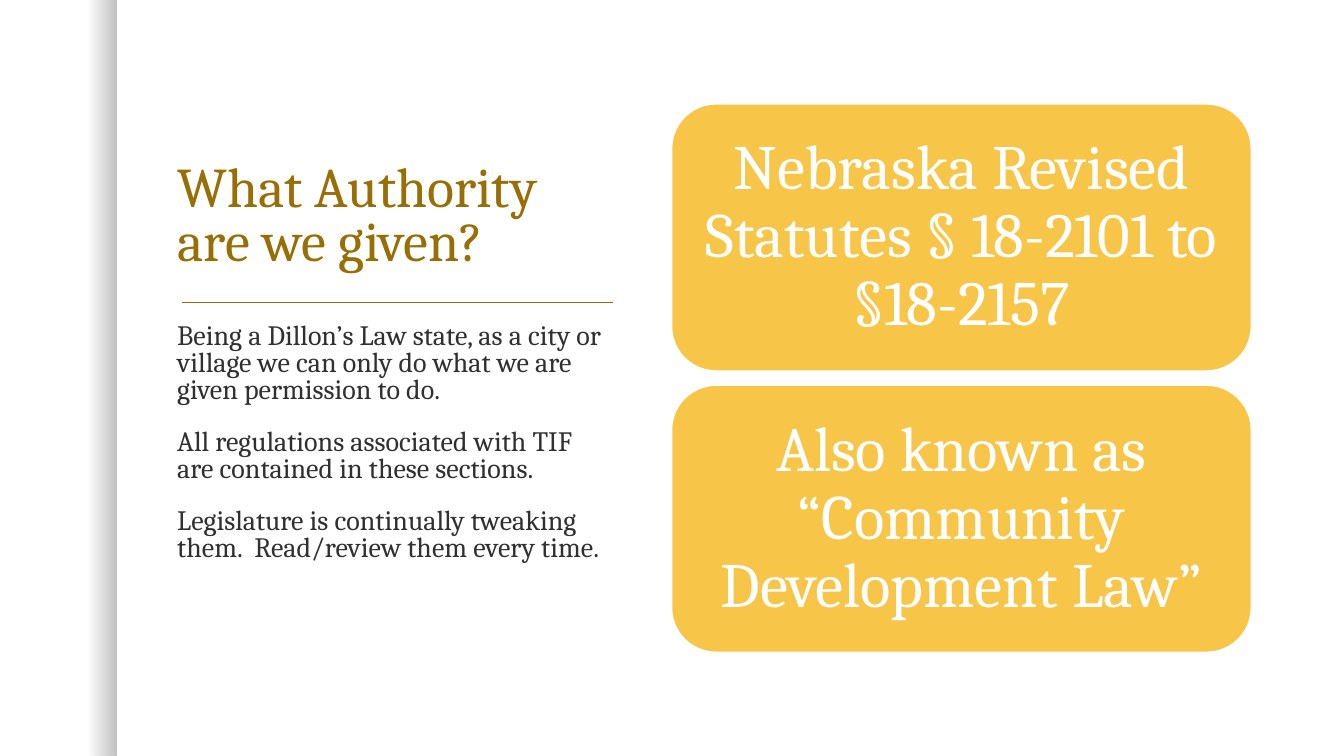
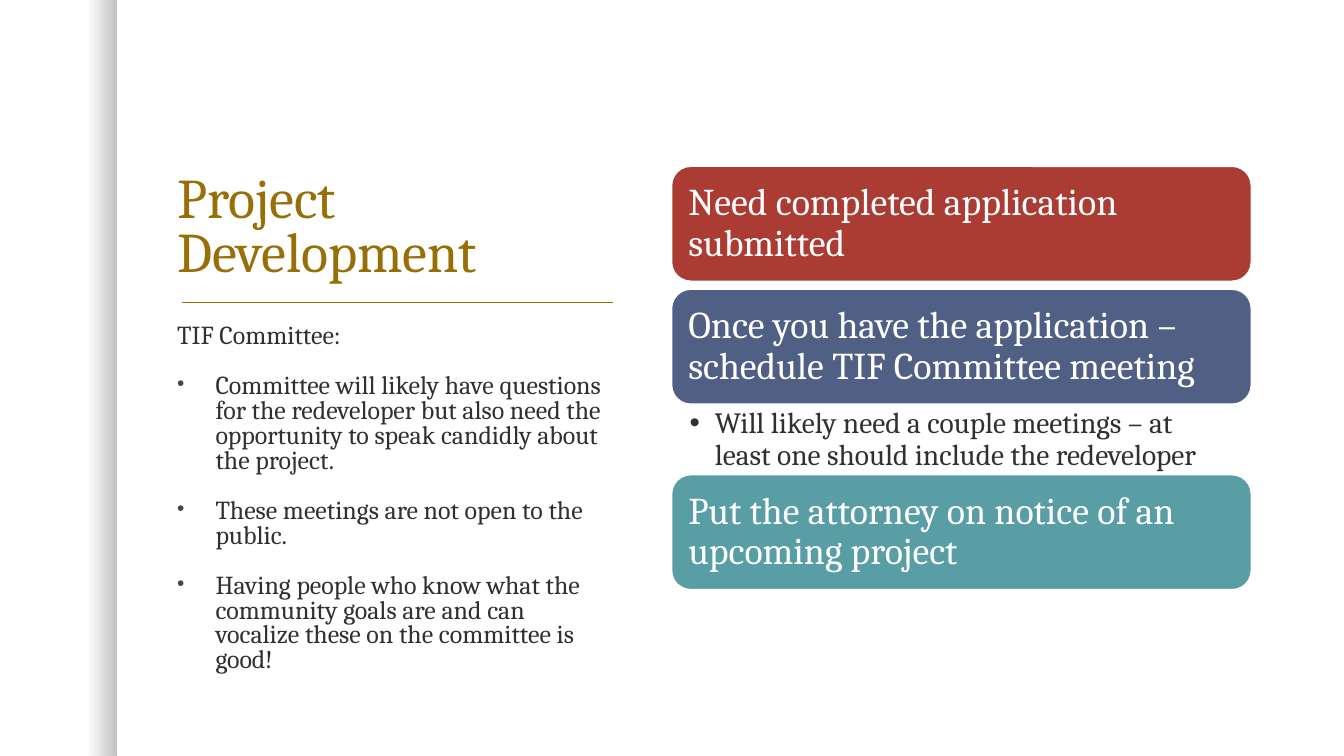
from dataclasses import dataclass

from lxml import etree
from pptx import Presentation, util as u
from pptx.dml.color import RGBColor
from pptx.enum import shapes, text
from pptx.oxml.ns import qn


@dataclass(frozen=True)
class Theme:
    """Colours and type sizes shared by the slides."""
    font: str = "Cambria"
    accent: str = "986F07"
    ink: str = "303030"
    bullet: str = "454545"
    white: str = "FFFFFF"
    shadow: str = "000000"
    gold: str = "F7C547"
    red: str = "AB3C33"
    blue: str = "506084"
    teal: str = "599EA5"
    title_size: float = 40
    statute_size: float = 45
    step_size: float = 27
    note_size: float = 21


@dataclass(frozen=True)
class Box:
    """A rectangle in slide units that yields inner boxes by percentage."""
    left: int
    top: int
    width: int
    height: int

    def inner(self, left, top, width, height):
        """Return the inner box at the given percentages."""
        return Box(int(self.left + self.width * left / 100),
                   int(self.top + self.height * top / 100),
                   int(self.width * width / 100),
                   int(self.height * height / 100))

    def bounds(self):
        """Return left, top, width and height."""
        return self.left, self.top, self.width, self.height


@dataclass(frozen=True)
class Card:
    """A rounded panel with its fill and share of the stack."""
    words: str
    color: str
    share: float


@dataclass(frozen=True)
class Note:
    """A bulleted remark under a card and its share of the stack."""
    words: str
    share: float


THEME = Theme()
SLIDE = Box(0, 0, u.Inches(13.33), u.Inches(7.5))
LEFT, CENTER = text.PP_ALIGN.LEFT, text.PP_ALIGN.CENTER
TOP, MIDDLE, BOTTOM = (text.MSO_ANCHOR.TOP, text.MSO_ANCHOR.MIDDLE,
                       text.MSO_ANCHOR.BOTTOM)


def set_frame(frame, anchor, insets=(0.1, 0.05, 0.1, 0.05)):
    """Set wrapping, anchor and insets in inches."""
    frame.word_wrap = True
    frame.auto_size = text.MSO_AUTO_SIZE.NONE
    frame.vertical_anchor = anchor
    (frame.margin_left, frame.margin_top,
     frame.margin_right, frame.margin_bottom) = map(u.Inches, insets)


def set_para(para, words, size, color, spacing, align=LEFT):
    """Fill a paragraph and format its runs."""
    para.text = words
    para.alignment = align
    para.line_spacing = spacing
    for span in para.runs:
        span.font.name = THEME.font
        span.font.size = u.Pt(size)
        span.font.color.rgb = RGBColor.from_string(color)


def add_bullet(para, indent, color, percent):
    """Give a paragraph a hanging round bullet."""
    props = para._p.get_or_add_pPr()
    props.set("marL", str(u.Inches(indent)))
    props.set("indent", str(-u.Inches(indent)))
    tint = etree.SubElement(props, qn("a:buClr"))
    etree.SubElement(tint, qn("a:srgbClr"), val=color)
    etree.SubElement(props, qn("a:buSzPct"), val=str(percent * 1000))
    etree.SubElement(props, qn("a:buFont"), typeface="Arial")
    etree.SubElement(props, qn("a:buChar"), char="•")


def add_edge_band(page, box):
    """Draw the soft shadow band at the left edge."""
    band = page.shapes.add_shape(shapes.MSO_SHAPE.RECTANGLE, *box.bounds())
    band.shadow.inherit = False
    band.line.fill.background()
    band.fill.gradient()
    band.fill.gradient_angle = 0
    for stop, position in zip(band.fill.gradient_stops, (0.75, 1)):
        stop.position = position
        stop.color.rgb = RGBColor.from_string(THEME.shadow)
    for tint, alpha in zip(band._element.spPr.iter(qn("a:srgbClr")), (0, 25)):
        etree.SubElement(tint, qn("a:alpha"), val=str(alpha * 1000))


def add_rule(page, box):
    """Draw the thin line along the top of a box."""
    rule = page.shapes.add_connector(
        shapes.MSO_CONNECTOR.STRAIGHT, box.left, box.top,
        box.left + box.width, box.top)
    rule.line.color.rgb = RGBColor.from_string(THEME.accent)
    rule.line.width = u.Pt(1)
    etree.SubElement(rule._element.spPr, qn("a:effectLst"))


def add_title(page, box, words):
    """Place and format the title placeholder."""
    title = page.shapes.title
    title.left, title.top, title.width, title.height = box.bounds()
    set_frame(title.text_frame, BOTTOM)
    set_para(title.text_frame.paragraphs[0], words, THEME.title_size,
             THEME.accent, 0.8)


def add_body(page, box, lines, size, bulleted_from):
    """Write the explanatory paragraphs, bulleted from a given index."""
    frame = page.shapes.add_textbox(*box.bounds()).text_frame
    set_frame(frame, TOP)
    for index, words in enumerate(lines):
        para = frame.add_paragraph() if index else frame.paragraphs[0]
        if index >= bulleted_from:
            add_bullet(para, 0.38, THEME.bullet, 80)
        set_para(para, words, size, THEME.ink, 0.8)
        if index:
            para.space_before = u.Pt(18)


def add_card(page, box, card, size, inset, align):
    """Draw one rounded card with its text."""
    panel = page.shapes.add_shape(
        shapes.MSO_SHAPE.ROUNDED_RECTANGLE, *box.bounds())
    panel.shadow.inherit = False
    panel.fill.solid()
    panel.fill.fore_color.rgb = RGBColor.from_string(card.color)
    panel.line.color.rgb = RGBColor.from_string(THEME.white)
    panel.line.width = u.Pt(1)
    set_frame(panel.text_frame, MIDDLE, (inset,) * 4)
    set_para(panel.text_frame.paragraphs[0], card.words, size,
             THEME.white, 0.9, align)


def add_note(page, box, note):
    """Write one bulleted remark."""
    frame = page.shapes.add_textbox(*box.bounds()).text_frame
    set_frame(frame, TOP, (0.18, 0.04, 0.21, 0.04))
    para = frame.paragraphs[0]
    add_bullet(para, 0.25, THEME.ink, 100)
    set_para(para, note.words, THEME.note_size, THEME.ink, 0.9)


def add_stack(page, box, items, gap, size, inset, align):
    """Stack cards with a gap between them and notes without one."""
    top = 0
    for index, item in enumerate(items):
        place = box.inner(0, top, 100, item.share)
        if isinstance(item, Note):
            add_note(page, place, item)
        else:
            add_card(page, place, item, size, inset, align)
        top += item.share
        neighbours = items[index:index + 2]
        if all(isinstance(each, Card) for each in neighbours):
            top += gap


def add_page(deck, title, title_share, lines, body_size, body_share,
             bulleted_from):
    """Add a slide with edge band, title, rule and body column."""
    page = deck.slides.add_slide(deck.slide_layouts[5])
    column = SLIDE.inner(12.45, 0, 33.75, 100)
    add_edge_band(page, SLIDE.inner(0, 0, 8.7, 100))
    add_rule(page, column.inner(3.33, 40, 94.9, 0))
    add_title(page, column.inner(0, 10, 100, title_share), title)
    add_body(page, column.inner(0, 42.27, 100, body_share), lines, body_size,
             bulleted_from)
    return page


def add_authority_page(deck):
    """Build the slide on statutory authority."""
    lines = (
        "Being a Dillon’s Law state, as a city or village we can only do "
        "what we are given permission to do.",
        "All regulations associated with TIF are contained in these sections.",
        "Legislature is continually tweaking them.  Read/review them every "
        "time.",
    )
    page = add_page(deck, "What Authority are we given?", 26.67, lines, 20,
                    37.73, len(lines))
    cards = [Card(words, THEME.gold, 48.7) for words in (
        "Nebraska Revised Statutes § 18-2101 to §18-2157",
        "Also known as “Community Development Law”")]
    add_stack(page, SLIDE.inner(49.97, 13.75, 43.13, 72.53), cards, 2.6,
              THEME.statute_size, 0.19, CENTER)


def add_development_page(deck):
    """Build the slide on project development."""
    lines = (
        "TIF Committee:",
        "Committee will likely have questions for the redeveloper but also "
        "need the opportunity to speak candidly about the project.",
        "These meetings are not open to the public.",
        "Having people who know what the community goals are and can "
        "vocalize these on the committee is good!",
    )
    page = add_page(deck, "Project Development", 28.13, lines, 18.5, 48.93, 1)
    share = 27.14
    items = [
        Card("Need completed application submitted", THEME.red, share),
        Card("Once you have the application – schedule TIF Committee meeting",
             THEME.blue, share),
        Note("Will likely need a couple meetings – at least one should "
             "include the redeveloper", 16.67),
        Card("Put the attorney on notice of an upcoming project", THEME.teal,
             share),
    ]
    add_stack(page, SLIDE.inner(49.97, 22, 43.13, 56), items, 1.9,
              THEME.step_size, 0.11, LEFT)


def main():
    """Build and save the deck."""
    deck = Presentation()
    deck.slide_width, deck.slide_height = SLIDE.width, SLIDE.height
    add_authority_page(deck)
    add_development_page(deck)
    deck.save("out.pptx")


if __name__ == "__main__":
    main()
